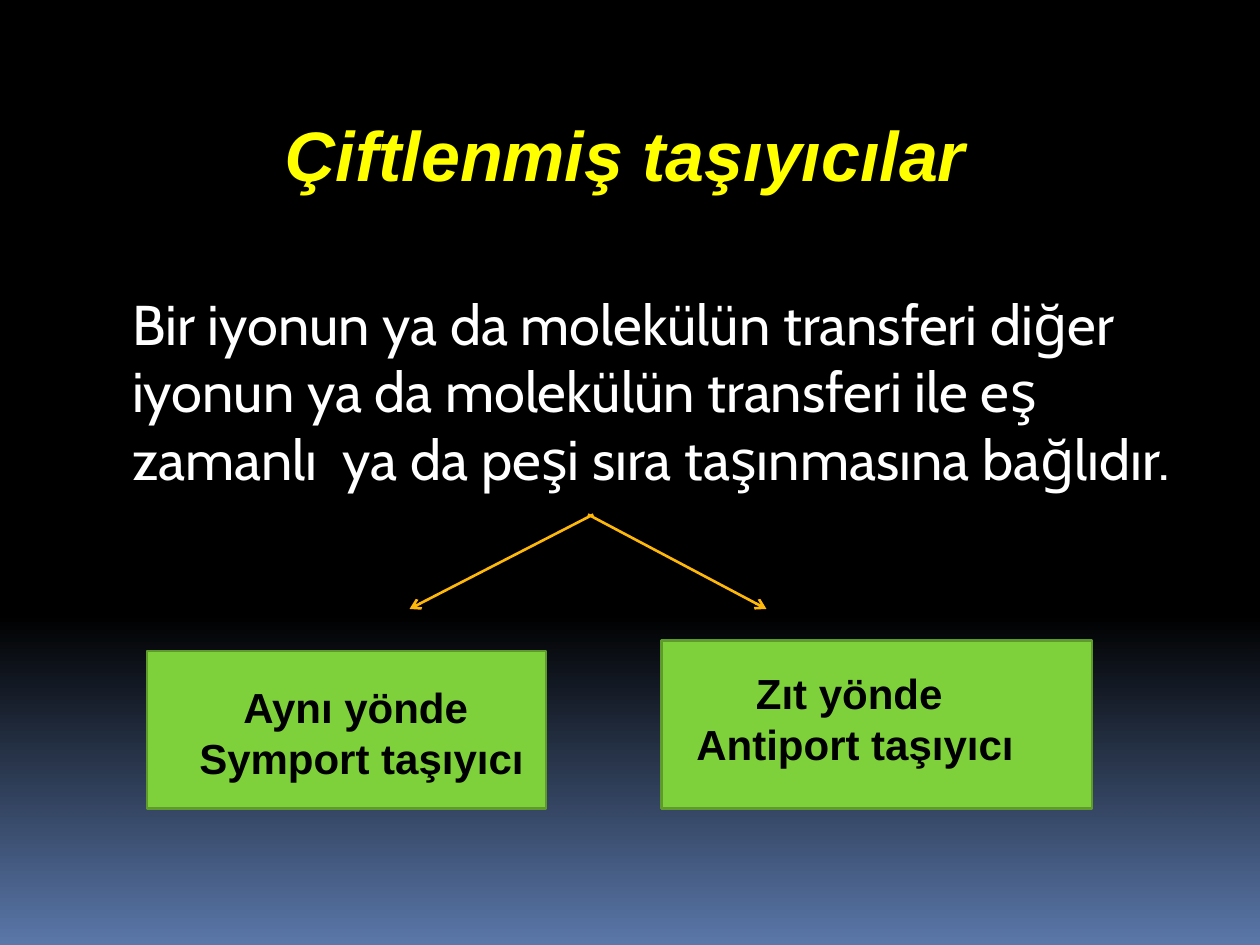
from dataclasses import dataclass

from lxml import etree
from pptx import Presentation
from pptx.dml.color import RGBColor
from pptx.enum.shapes import MSO_CONNECTOR, MSO_SHAPE
from pptx.enum.text import MSO_AUTO_SIZE, PP_ALIGN
from pptx.oxml.ns import qn
from pptx.util import Pt

STRAIGHT = MSO_CONNECTOR.STRAIGHT
RECTANGLE = MSO_SHAPE.RECTANGLE
GROW = MSO_AUTO_SIZE.SHAPE_TO_FIT_TEXT
FIXED = MSO_AUTO_SIZE.NONE
LEFT, CENTER = PP_ALIGN.LEFT, PP_ALIGN.CENTER


@dataclass
class Area:
    left: float
    top: float
    width: float
    height: float

    def lengths(self) -> list:
        return [Pt(v) for v in (self.left, self.top, self.width, self.height)]


@dataclass
class Style:
    font: str
    size: float
    color: str
    bold: bool = False
    italic: bool = False
    align: PP_ALIGN = LEFT


@dataclass
class Carrier:
    panel: Area
    label: Area
    text: str
    arrow_start: float
    arrow_end: float


TITLE = Style("Arial", 40, "FFFF00", bold=True, italic=True)
BODY = Style("Cabin", 32, "FFFFFF")
LABEL = Style("Arial", 24, "000000", bold=True, align=CENTER)
ARROW_TOP, ARROW_BOTTOM = 294, 348

CARRIERS = [
    Carrier(Area(84, 372, 228, 90), Area(105.8, 386, 201.6, 65.5),
            "Aynı yönde \nSymport taşıyıcı", 339, 234),
    Carrier(Area(378, 366, 246, 96), Area(390, 378, 197.3, 65.5),
            "Zıt yönde \nAntiport taşıyıcı", 336, 438),
]


def rgb(color: str) -> RGBColor:
    return RGBColor.from_string(color)


def paint_background(page) -> None:
    fill = page.background.fill
    fill.gradient()
    fill.gradient_angle = 270
    for stop, (position, color) in zip(fill.gradient_stops, [(0.65, "000000"), (1, "5A77A9")]):
        stop.position = position
        stop.color.rgb = rgb(color)


def add_text(page, area: Area, text: str, style: Style, wrap: bool = True, auto_size=GROW):
    box = page.shapes.add_textbox(*area.lengths())
    frame = box.text_frame
    frame.text = text
    frame.word_wrap = wrap
    frame.auto_size = auto_size
    for para in frame.paragraphs:
        para.alignment = style.align
        for span in para.runs:
            span.font.name = style.font
            span.font.size = Pt(style.size)
            span.font.bold = style.bold
            span.font.italic = style.italic
            span.font.color.rgb = rgb(style.color)
    return box


def add_arrow(page, start: float, end: float) -> None:
    arrow = page.shapes.add_connector(
        STRAIGHT, Pt(start), Pt(ARROW_TOP), Pt(end), Pt(ARROW_BOTTOM))
    arrow.line.color.rgb = rgb("FEB80A")
    arrow.line.width = Pt(1.5)
    etree.SubElement(arrow.line._get_or_add_ln(), qn("a:tailEnd"), type="arrow")
    etree.SubElement(arrow._element.spPr, qn("a:effectLst"))


def add_panel(page, area: Area) -> None:
    panel = page.shapes.add_shape(RECTANGLE, *area.lengths())
    panel.shadow.inherit = False
    panel.fill.solid()
    panel.fill.fore_color.rgb = rgb("7FD13B")
    panel.line.color.rgb = rgb("5E9B2C")
    panel.line.width = Pt(1.5)


def main() -> None:
    deck = Presentation()
    deck.slide_width, deck.slide_height = Pt(720), Pt(540)
    page = deck.slides.add_slide(deck.slide_layouts[6])
    paint_background(page)

    add_text(page, Area(156, 60, 438, 55.4), "Çiftlenmiş taşıyıcılar", TITLE)
    body = add_text(
        page, Area(36, 162, 654, 156),
        "Bir iyonun ya da molekülün transferi diğer iyonun ya da molekülün "
        "transferi ile eş zamanlı  ya da peşi sıra taşınmasına bağlıdır.",
        BODY, auto_size=FIXED)
    para = body.text_frame.paragraphs[0]
    para.space_before = Pt(7)
    para._p.get_or_add_pPr().set("marL", str(Pt(32.4)))

    for carrier in CARRIERS:
        add_arrow(page, carrier.arrow_start, carrier.arrow_end)
    for carrier in CARRIERS:
        add_panel(page, carrier.panel)
        add_text(page, carrier.label, carrier.text, LABEL, wrap=False)

    deck.save("out.pptx")


if __name__ == "__main__":
    main()
